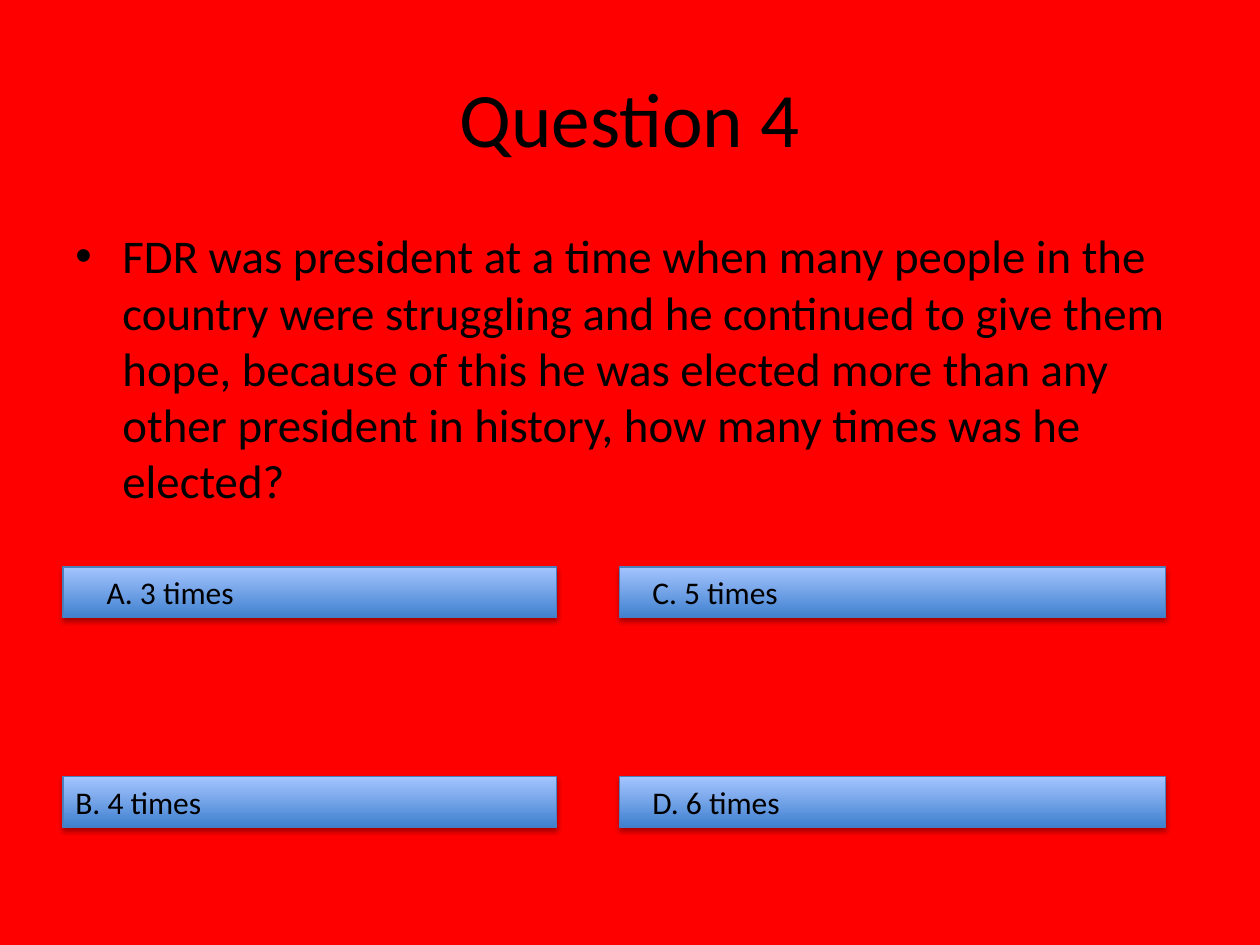
from dataclasses import dataclass

from lxml.etree import SubElement
from pptx import Presentation
from pptx.dml.color import RGBColor
from pptx.enum.shapes import MSO_SHAPE
from pptx.enum.text import MSO_ANCHOR, MSO_AUTO_SIZE, PP_ALIGN
from pptx.oxml.ns import qn
from pptx.util import Cm, Pt


@dataclass(frozen=True)
class Theme:
    font: str = "Calibri"
    background: str = "FF0000"
    text: str = "000000"
    shadow: str = "000000"
    button_bottom: str = "3F80CE"
    button_top: str = "A4C4FF"
    button_line: str = "4B7EBC"
    title_size: float = 44
    question_size: float = 26.8
    answer_size: float = 18


class QuizSlide:
    def __init__(self, slide, theme):
        self.slide = slide
        self.theme = theme
        fill = slide.background.fill
        fill.solid()
        fill.fore_color.rgb = RGBColor.from_string(theme.background)

    def add_run(self, paragraph, text, size):
        run = paragraph.add_run()
        run.text = text
        run.font.name = self.theme.font
        run.font.size = Pt(size)
        run.font.color.rgb = RGBColor.from_string(self.theme.text)

    def add_text(self, text, box, size, align=PP_ALIGN.LEFT, anchor=MSO_ANCHOR.TOP):
        shape = self.slide.shapes.add_textbox(*map(Cm, box))
        frame = shape.text_frame
        frame.word_wrap = True
        frame.auto_size = MSO_AUTO_SIZE.NONE
        frame.vertical_anchor = anchor
        paragraph = frame.paragraphs[0]
        paragraph.alignment = align
        self.add_run(paragraph, text, size)
        return paragraph

    def add_bullet(self, text, box, size):
        paragraph = self.add_text(text, box, size)
        paragraph.space_before = Pt(5.4)
        properties = paragraph._p.get_or_add_pPr()
        hanging = Cm(0.95)
        properties.set("marL", str(hanging))
        properties.set("indent", str(-hanging))
        SubElement(properties, qn("a:buFont"), typeface="Arial")
        SubElement(properties, qn("a:buChar"), char="•")

    def add_button(self, box):
        shape = self.slide.shapes.add_shape(
            MSO_SHAPE.ACTION_BUTTON_CUSTOM, *map(Cm, box))
        shape.fill.gradient()
        shape.fill.gradient_angle = 90
        colors = (self.theme.button_bottom, self.theme.button_top)
        for stop, position, color in zip(shape.fill.gradient_stops, (0, 1), colors):
            stop.position = position
            stop.color.rgb = RGBColor.from_string(color)
        shape.line.color.rgb = RGBColor.from_string(self.theme.button_line)
        shape.line.width = Pt(0.75)
        self.add_shadow(shape)
        return shape

    def add_shadow(self, shape):
        shape.shadow.inherit = False
        effects = shape._element.spPr.find(qn("a:effectLst"))
        shadow = SubElement(
            effects, qn("a:outerShdw"), blurRad=str(Pt(3.1)), dist=str(Pt(1.8)),
            dir="5400000", rotWithShape="0")
        color = SubElement(shadow, qn("a:srgbClr"), val=self.theme.shadow)
        SubElement(color, qn("a:alpha"), val="35000")

    def add_button_label(self, shape, text):
        frame = shape.text_frame
        frame.vertical_anchor = MSO_ANCHOR.MIDDLE
        paragraph = frame.paragraphs[0]
        paragraph.alignment = PP_ALIGN.LEFT
        self.add_run(paragraph, text, self.theme.answer_size)


def main():
    presentation = Presentation()
    presentation.slide_width = Cm(25.4)
    presentation.slide_height = Cm(19.05)
    theme = Theme()
    quiz = QuizSlide(
        presentation.slides.add_slide(presentation.slide_layouts[6]), theme)

    left, right = (1.27, 9.95), (12.49, 11.0)
    upper, lower, height = 11.43, 15.66, 1.02
    buttons = {
        (column, top): quiz.add_button((column[0], top, column[1], height))
        for top in (lower, upper) for column in (left, right)
    }
    quiz.add_button_label(buttons[left, lower], "B. 4 times")

    quiz.add_text("Question 4", (1.27, 0.76, 22.86, 3.18), theme.title_size,
                  PP_ALIGN.CENTER, MSO_ANCHOR.MIDDLE)
    quiz.add_bullet(
        "FDR was president at a time when many people in the country were "
        "struggling and he continued to give them hope, because of this he was "
        "elected more than any other president in history, how many times was "
        "he elected?",
        (1.27, 4.45, 22.86, 5.28), theme.question_size)

    for text, x, y, width in (
        ("A. 3 times", 1.9, upper, 3.81),
        ("C. 5 times", 12.9, upper, 4.02),
        ("D. 6 times", 12.9, lower, 4.02),
    ):
        quiz.add_text(text, (x, y, width, height), theme.answer_size)

    presentation.save("out.pptx")


if __name__ == "__main__":
    main()
